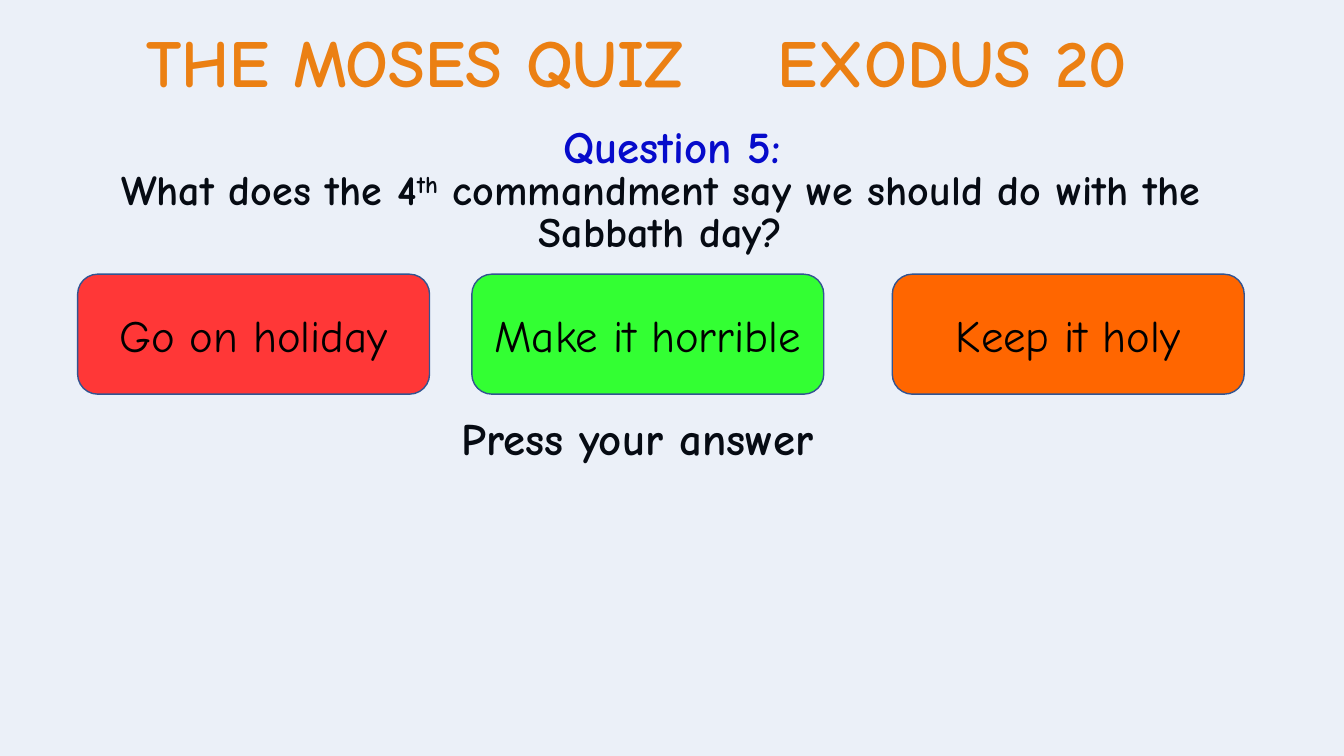
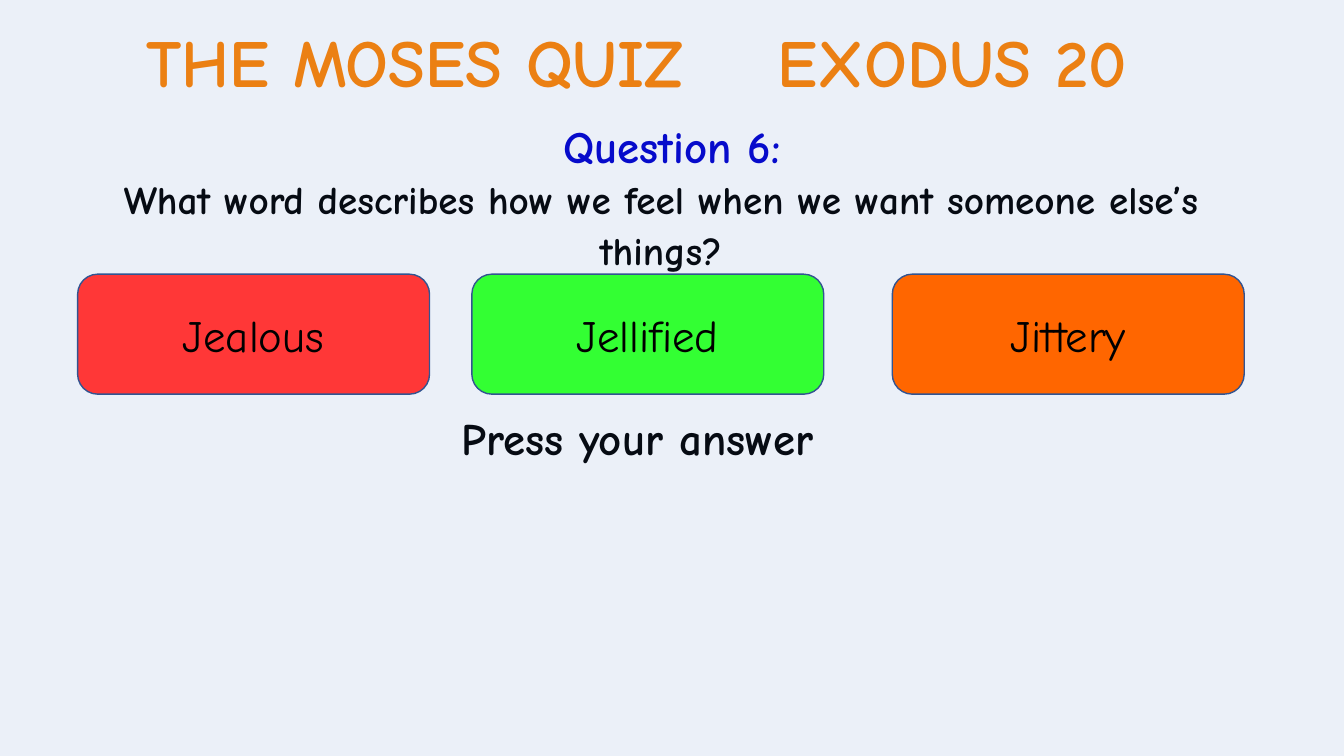
from lxml import etree
from pptx import Presentation
from pptx import util as u
from pptx.dml.color import RGBColor
from pptx.enum import shapes, text
from pptx.oxml.ns import qn

TITLE = "THE MOSES QUIZ\tEXODUS 20"
PROMPT = "Press your answer"
# Question runs are (text, is_superscript).
QUESTIONS = [
    dict(heading="Question 5:", size=30, spacing=30,
         runs=[("What does the 4", False), ("th", True),
               (" commandment say we should do with the Sabbath day?", False)],
         answers=["Go on holiday", "Make it horrible", "Keep it holy"]),
    dict(heading="Question 6:", size=28, spacing=36,
         runs=[("What word describes how we feel when we want someone else’s things?", False)],
         answers=["Jealous", "Jellified", "Jittery"]),
]

FONT = "Comic Neue"
COLORS = dict(title="FF8200", heading="0000CC", ink="000000", wash="4472C4", edge="325491")
BUTTONS = [(0.77, "FF3737"), (4.68, "33FF33"), (8.85, "FF6600")]  # left, fill
BUTTON_TOP, BUTTON_W, BUTTON_H = 2.72, 3.49, 1.19
TITLE_BOX, TITLE_TAB = (1.45, 0.15, 11, 0.91), 6.26
HEADING_BOX = (4.46, 1.13, 4.41, 0.64)
QUESTION_BOX = (0.77, 1.66, 11.57, 1.19)
PROMPT_BOX = (4.48, 4.09, 6.73, 0.72)
CENTER, LEFT = text.PP_ALIGN.CENTER, text.PP_ALIGN.LEFT


def inches(box):
    return [u.Inches(v) for v in box]


def style(p, size, color, bold=True, align=CENTER):
    p.alignment = align
    p.font.name, p.font.size, p.font.bold = FONT, u.Pt(size), bold
    p.font.color.rgb = RGBColor.from_string(color)


def add_title(s):
    """Fill the title placeholder; a tab stop separates its two halves."""
    title = s.shapes.title
    title.left, title.top, title.width, title.height = inches(TITLE_BOX)
    tf = title.text_frame
    tf.text = TITLE
    tf.margin_left = 0
    tf.vertical_anchor = text.MSO_ANCHOR.TOP
    p = tf.paragraphs[0]
    style(p, 48, COLORS["title"], align=LEFT)
    tabs = etree.Element(qn("a:tabLst"))
    etree.SubElement(tabs, qn("a:tab"), pos=str(u.Inches(TITLE_TAB)), algn="l")
    p._p.get_or_add_pPr().insert(0, tabs)


def add_text(s, box, runs, size, color, align=CENTER, spacing=None, before=0):
    tf = s.shapes.add_textbox(*inches(box)).text_frame
    tf.word_wrap = True
    p = tf.paragraphs[0]
    style(p, size, color, align=align)
    p.line_spacing, p.space_before = spacing, u.Pt(before)
    for words, superscript in runs:
        r = p.add_run()
        r.text = words
        if superscript:
            r._r.get_or_add_rPr().set("baseline", "30000")


def add_block(s, kind, box, color):
    sp = s.shapes.add_shape(kind, *box)
    sp.shadow.inherit = False
    sp.fill.solid()
    sp.fill.fore_color.rgb = RGBColor.from_string(color)
    return sp


def add_wash(s, width, height):
    """Tint the slide and the text beneath with a 10% blue layer."""
    sp = add_block(s, shapes.MSO_SHAPE.RECTANGLE, (0, 0, width, height), COLORS["wash"])
    sp.line.fill.background()
    color = sp._element.spPr.find(qn("a:solidFill"))[0]
    etree.SubElement(color, qn("a:alpha"), val="10000")


def add_button(s, left, color, answer):
    box = inches((left, BUTTON_TOP, BUTTON_W, BUTTON_H))
    sp = add_block(s, shapes.MSO_SHAPE.ROUNDED_RECTANGLE, box, color)
    sp.line.color.rgb = RGBColor.from_string(COLORS["edge"])
    sp.line.width = u.Pt(1)
    tf = sp.text_frame
    tf.text = answer
    tf.vertical_anchor = text.MSO_ANCHOR.MIDDLE
    style(tf.paragraphs[0], 32, COLORS["ink"], bold=False)


def main():
    prs = Presentation()
    prs.slide_width, prs.slide_height = u.Inches(13.33), u.Inches(7.5)
    for q in QUESTIONS:
        s = prs.slides.add_slide(prs.slide_layouts[5])
        add_title(s)
        add_text(s, QUESTION_BOX, q["runs"], q["size"], COLORS["ink"],
                 spacing=u.Pt(q["spacing"]), before=10)
        add_text(s, PROMPT_BOX, [(PROMPT, False)], 32, COLORS["ink"],
                 align=LEFT, spacing=0.9, before=7.5)
        add_text(s, HEADING_BOX, [(q["heading"], False)], 32, COLORS["heading"])
        add_wash(s, prs.slide_width, prs.slide_height)
        for (left, color), answer in zip(BUTTONS, q["answers"]):
            add_button(s, left, color, answer)
    prs.save("out.pptx")


if __name__ == "__main__":
    main()
